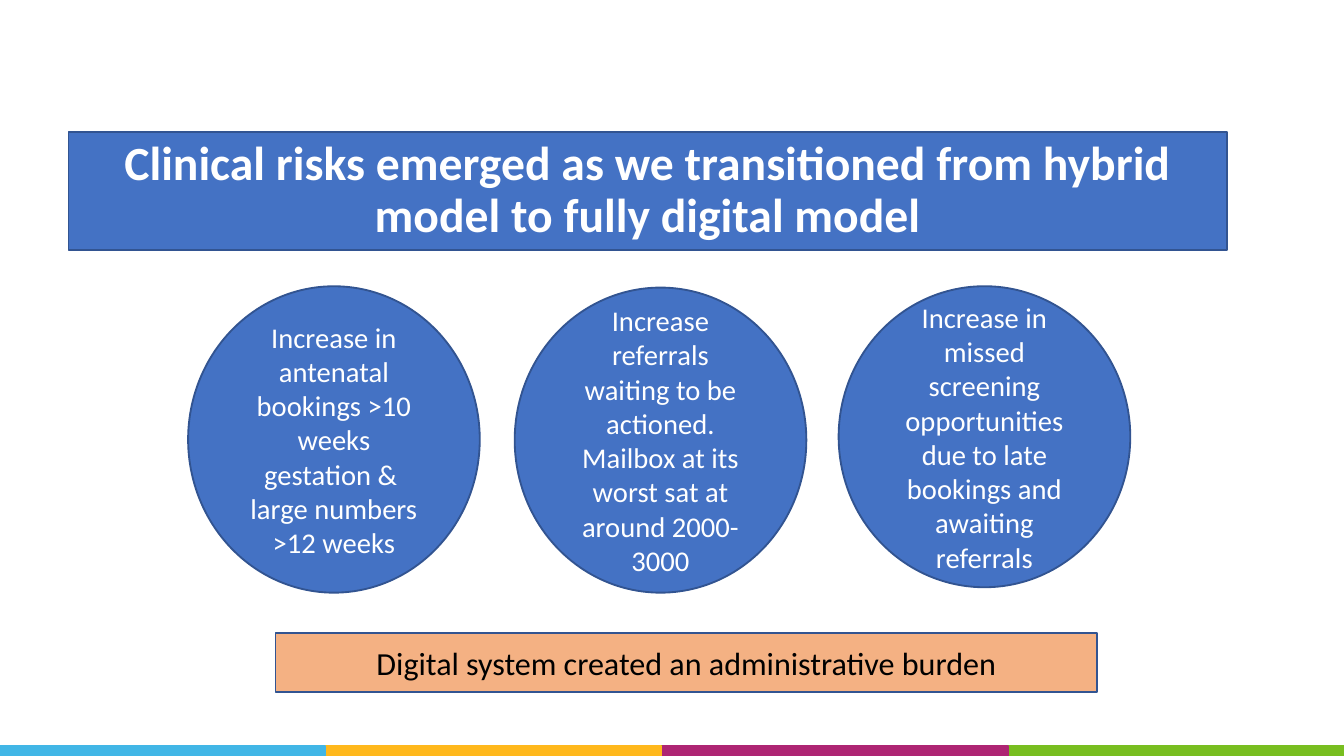
"""Build the slide on clinical risks of the move to a digital model."""
import pptx
import pptx.dml.color
import pptx.enum.shapes
import pptx.enum.text
import pptx.util

Inches = pptx.util.Inches
Pt = pptx.util.Pt
Shape = pptx.enum.shapes.MSO_SHAPE

COLORS = {
    "blue": "4472C4", "outline": "325491", "orange": "F4B183",
    "white": "FFFFFF", "black": "000000", "sky": "41B6E6",
    "yellow": "FFB81C", "magenta": "AE2573", "green": "78BE20",
}
RISKS = [
    ("Increase in antenatal bookings >10 weeks gestation &  large numbers >12 weeks", 0, 0, 2.28),
    ("Increase referrals waiting to be actioned. Mailbox at its worst sat at around 2000-3000", 2.43, 0.01, 2.27),
    ("Increase in missed screening opportunities due to late bookings and awaiting referrals", 4.84, 0, 2.24),
]


def get_color(name):
    """Return the named colour as an RGB value."""
    return pptx.dml.color.RGBColor.from_string(COLORS[name])


def set_values(target, values):
    """Set each attribute of the target from a dict."""
    for name, value in values.items():
        setattr(target, name, value)


def add_panel(slide, kind, box, fill, outline):
    """Add a filled and outlined shape in the box."""
    shape = slide.shapes.add_shape(kind, *map(Inches, box))
    shape.shadow.inherit = False
    shape.fill.solid()
    shape.fill.fore_color.rgb = get_color(fill)
    shape.line.color.rgb = get_color(outline)
    shape.line.width = Pt(1)
    return shape


def write_text(shape, text, size, color="white", bold=False, spacing=1.0, margins=(0.07, 0.04)):
    """Write one centred paragraph in the shape."""
    across, down = map(Inches, margins)
    frame = shape.text_frame
    set_values(frame, {
        "word_wrap": True, "vertical_anchor": pptx.enum.text.MSO_ANCHOR.MIDDLE,
        "margin_left": across, "margin_right": across,
        "margin_top": down, "margin_bottom": down,
    })
    paragraph = frame.paragraphs[0]
    set_values(paragraph, {
        "alignment": pptx.enum.text.PP_ALIGN.CENTER,
        "line_spacing": spacing, "space_after": Pt(4.5),
    })
    run = paragraph.add_run()
    run.text = text
    set_values(run.font, {"name": "Calibri", "size": Pt(size), "bold": bold})
    run.font.color.rgb = get_color(color)


def add_footer(slide, box):
    """Add the four-coloured stripe, each band lying over the one before."""
    left, top, width, height = box
    bands = [("green", 0, width), ("magenta", 4.93, 2.57),
             ("yellow", 2.42, 2.5), ("sky", 0, 2.42)]
    for color, offset, band_width in bands:
        add_panel(slide, Shape.RECTANGLE, (left + offset, top, band_width, height), color, color)


def add_title(slide, box):
    """Add the title banner."""
    shape = add_panel(slide, Shape.RECTANGLE, box, "blue", "outline")
    write_text(shape, "Clinical risks emerged as we transitioned from hybrid model to fully digital model",
               25.5, bold=True, spacing=0.9)


def add_risks(slide, box):
    """Add the row of risk circles in the box."""
    left, top, _, _ = box
    for text, offset, drop, height in RISKS:
        circle = (left + offset, top + drop, 2.17, height)
        shape = add_panel(slide, Shape.OVAL, circle, "blue", "outline")
        write_text(shape, text, 15.3, margins=(0.1, 0.05))


def add_conclusion(slide, box):
    """Add the concluding statement."""
    shape = add_panel(slide, Shape.RECTANGLE, box, "orange", "outline")
    write_text(shape, "Digital system created an administrative burden", 17.2, "black")


def main():
    """Build and save the presentation."""
    presentation = pptx.Presentation()
    width = Inches(10)
    set_values(presentation, {"slide_width": width, "slide_height": width * 9 // 16})
    slide = presentation.slides.add_slide(presentation.slide_layouts[6])
    add_footer(slide, (0, 5.55, 10, 0.08))
    add_title(slide, (0.51, 0.98, 8.62, 0.88))
    add_risks(slide, (1.4, 2.13, 7.01, 2.28))
    add_conclusion(slide, (2.05, 4.71, 6.11, 0.44))
    presentation.save("out.pptx")


if __name__ == "__main__":
    main()
